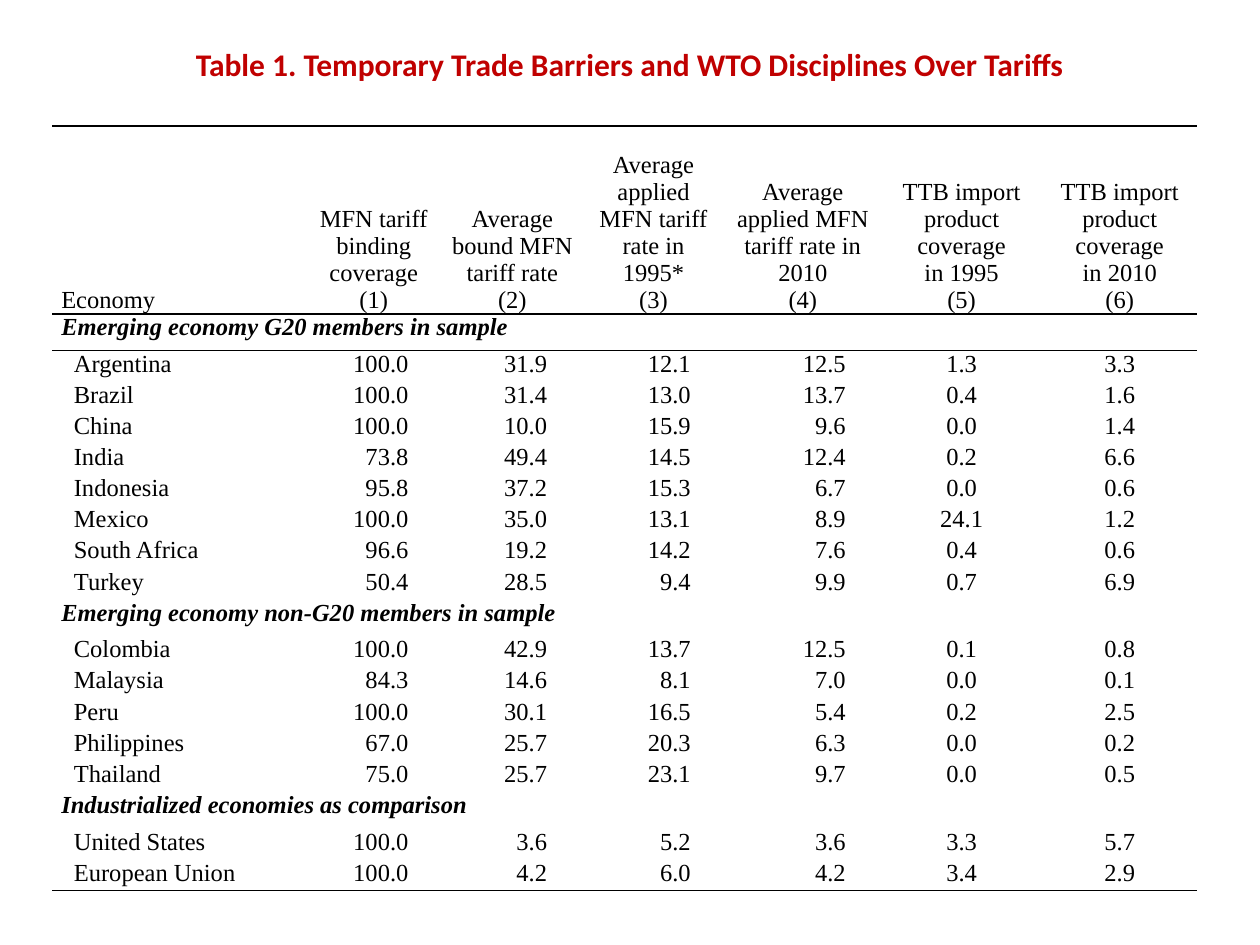
"""Build the slide comparing tariff disciplines and temporary trade barriers."""
from dataclasses import dataclass

from lxml import etree
from pptx import Presentation
from pptx.dml.color import RGBColor
from pptx.enum.text import MSO_ANCHOR, PP_ALIGN
from pptx.oxml.ns import qn
from pptx.util import Pt

LEFT, CENTER, RIGHT = PP_ALIGN.LEFT, PP_ALIGN.CENTER, PP_ALIGN.RIGHT
TOP, MIDDLE, BOTTOM = MSO_ANCHOR.TOP, MSO_ANCHOR.MIDDLE, MSO_ANCHOR.BOTTOM
PLAIN_TABLE_STYLE = "{2D5ABB26-0587-4C30-8999-92F81FD0307C}"

TITLE = "Table 1. Temporary Trade Barriers and WTO Disciplines Over Tariffs"
HEADINGS = [
    ["Economy"],
    ["MFN tariff binding coverage", "(1)"],
    ["Average bound MFN tariff rate", "(2)"],
    ["Average", "applied MFN tariff rate in 1995*", "(3)"],
    ["Average", "applied MFN tariff rate in 2010", "(4)"],
    ["TTB import product coverage", "in 1995", "(5)"],
    ["TTB import product coverage", "in 2010", "(6)"],
]
GROUPS = {
    "Emerging economy G20 members in sample": [
        ("Argentina", "100.0", "31.9", "12.1", "12.5", "1.3", "3.3"),
        ("Brazil", "100.0", "31.4", "13.0", "13.7", "0.4", "1.6"),
        ("China", "100.0", "10.0", "15.9", "9.6", "0.0", "1.4"),
        ("India", "73.8", "49.4", "14.5", "12.4", "0.2", "6.6"),
        ("Indonesia", "95.8", "37.2", "15.3", "6.7", "0.0", "0.6"),
        ("Mexico", "100.0", "35.0", "13.1", "8.9", "24.1", "1.2"),
        ("South Africa", "96.6", "19.2", "14.2", "7.6", "0.4", "0.6"),
        ("Turkey", "50.4", "28.5", "9.4", "9.9", "0.7", "6.9"),
    ],
    "Emerging economy non-G20 members in sample": [
        ("Colombia", "100.0", "42.9", "13.7", "12.5", "0.1", "0.8"),
        ("Malaysia", "84.3", "14.6", "8.1", "7.0", "0.0", "0.1"),
        ("Peru", "100.0", "30.1", "16.5", "5.4", "0.2", "2.5"),
        ("Philippines", "67.0", "25.7", "20.3", "6.3", "0.0", "0.2"),
        ("Thailand", "75.0", "25.7", "23.1", "9.7", "0.0", "0.5"),
    ],
    "Industrialized economies as comparison": [
        ("United States", "100.0", "3.6", "5.2", "3.6", "3.3", "5.7"),
        ("European Union", "100.0", "4.2", "6.0", "4.2", "3.4", "2.9"),
    ],
}
COLUMN_WIDTHS = [144, 79.2, 79.2, 82.1, 88.6, 92.9, 87.8]
COLUMN_ALIGNS = [LEFT] + [RIGHT] * 4 + [CENTER] * 2
HEADING_HEIGHT, GROUP_HEIGHT, ECONOMY_HEIGHT = 107.3, 21, 17.8


@dataclass(frozen=True)
class Theme:
    title_font: str = "Calibri"
    title_size: float = 18
    title_color: str = "C00000"
    body_font: str = "Times New Roman"
    body_size: float = 14
    ink: str = "000000"
    rule_width: float = 1
    side_margin: float = 5.04
    number_margin: float = 19.8
    group_gap: float = 2.9
    indent: float = 7.2


class SlideBuilder:
    def __init__(self, slide, theme):
        self.slide = slide
        self.theme = theme

    def style(self, paragraph, font, size, color, align, bold=False, italic=False):
        paragraph.alignment = align
        paragraph.font.name = font
        paragraph.font.size = Pt(size)
        paragraph.font.color.rgb = RGBColor.from_string(color)
        paragraph.font.bold = bold
        paragraph.font.italic = italic

    def title(self, text, left, top, width, height):
        frame = self.slide.shapes.add_textbox(
            Pt(left), Pt(top), Pt(width), Pt(height)).text_frame
        frame.word_wrap = True
        frame.vertical_anchor = MIDDLE
        frame.text = text
        self.style(frame.paragraphs[0], self.theme.title_font, self.theme.title_size,
                   self.theme.title_color, CENTER, bold=True)

    def rule(self, cell, edge):
        line = etree.SubElement(cell._tc.get_or_add_tcPr(), qn(f"a:{edge}"),
                                w=str(Pt(self.theme.rule_width)))
        fill = etree.SubElement(line, qn("a:solidFill"))
        etree.SubElement(fill, qn("a:srgbClr"), val=self.theme.ink)

    def cell(self, cell, lines, align, anchor=TOP, edges=(), right=None, bottom=0,
             indent=0, emphasis=False):
        for edge in edges:
            self.rule(cell, edge)
        cell.fill.background()
        cell.vertical_anchor = anchor
        cell.margin_left = Pt(self.theme.side_margin)
        cell.margin_right = Pt(right or self.theme.side_margin)
        cell.margin_top, cell.margin_bottom = Pt(0), Pt(bottom)
        cell.text = "\n".join(lines)
        for paragraph in cell.text_frame.paragraphs:
            self.style(paragraph, self.theme.body_font, self.theme.body_size,
                       self.theme.ink, align, emphasis, emphasis)
            if indent:
                paragraph._p.get_or_add_pPr().set("indent", str(Pt(indent)))

    def heading_row(self, cells):
        for column, (cell, lines) in enumerate(zip(cells, HEADINGS)):
            self.cell(cell, lines, CENTER if column else LEFT, BOTTOM, ("lnT", "lnB"))

    def group_row(self, cells, name, edges):
        cells[0].merge(cells[-1])
        self.cell(cells[0], [name], LEFT, edges=edges,
                  bottom=self.theme.group_gap, emphasis=True)
        for covered in cells[1:]:
            for edge in edges:
                self.rule(covered, edge)

    def economy_row(self, cells, values, edges):
        for column, (cell, value, align) in enumerate(zip(cells, values, COLUMN_ALIGNS)):
            self.cell(cell, [value], align, edges=edges,
                      right=self.theme.number_margin if align == RIGHT else None,
                      indent=0 if column else self.theme.indent)

    def table(self, left, top):
        heights = [HEADING_HEIGHT]
        for economies in GROUPS.values():
            heights += [GROUP_HEIGHT] + [ECONOMY_HEIGHT] * len(economies)
        table = self.slide.shapes.add_table(
            len(heights), len(COLUMN_WIDTHS), Pt(left), Pt(top),
            Pt(sum(COLUMN_WIDTHS)), Pt(sum(heights))).table
        table.first_row = table.horz_banding = False
        table._tbl.tblPr.find(qn("a:tableStyleId")).text = PLAIN_TABLE_STYLE
        for column, width in zip(table.columns, COLUMN_WIDTHS):
            column.width = Pt(width)
        for row, height in zip(table.rows, heights):
            row.height = Pt(height)

        rows = [list(row.cells) for row in table.rows]
        self.heading_row(rows[0])
        index = 1
        for name, economies in GROUPS.items():
            self.group_row(rows[index], name, ("lnT",) if index == 1 else ())
            index += 1
            for values in economies:
                last = index == len(rows) - 1
                self.economy_row(rows[index], values, ("lnB",) if last else ())
                index += 1


def main():
    deck = Presentation()
    deck.slide_width, deck.slide_height = Pt(720), Pt(540)
    builder = SlideBuilder(deck.slides.add_slide(deck.slide_layouts[6]), Theme())
    builder.title(TITLE, 36, 12.24, 648, 48.24)
    builder.table(30, 72)
    deck.save("out.pptx")


if __name__ == "__main__":
    main()
